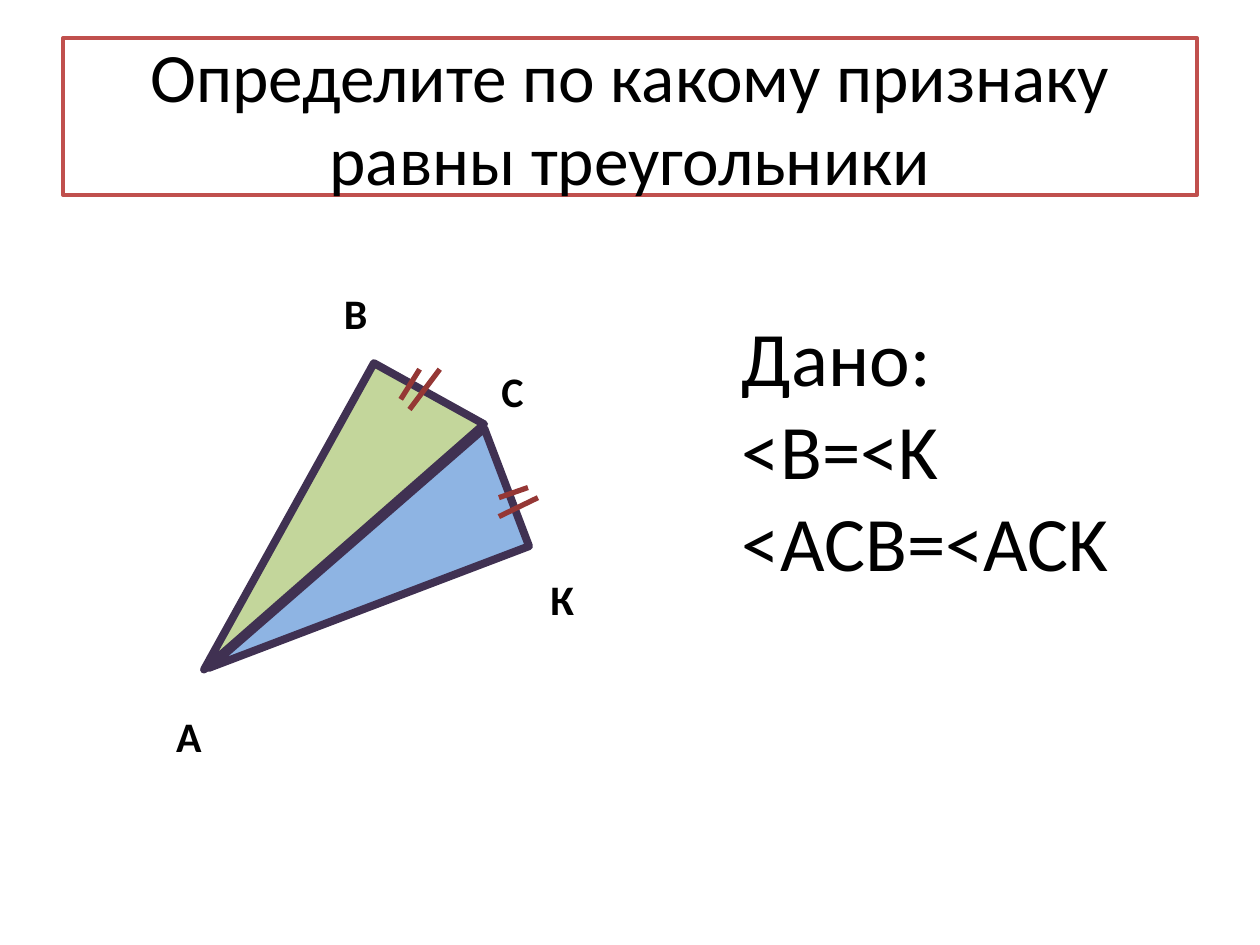
from typing import NamedTuple

from lxml import etree
from pptx import Presentation
from pptx.dml.color import RGBColor
from pptx.enum.shapes import MSO_CONNECTOR, MSO_SHAPE
from pptx.enum.text import MSO_ANCHOR, MSO_AUTO_SIZE, PP_ALIGN
from pptx.oxml.ns import qn
from pptx.util import Pt

RIGHT_TRIANGLE = MSO_SHAPE.RIGHT_TRIANGLE
STRAIGHT = MSO_CONNECTOR.STRAIGHT
MIDDLE = MSO_ANCHOR.MIDDLE
CENTER = PP_ALIGN.CENTER
FIT_SHAPE, FIT_NONE = MSO_AUTO_SIZE.SHAPE_TO_FIT_TEXT, MSO_AUTO_SIZE.NONE

FONT = "Calibri"
BLACK = RGBColor(0x00, 0x00, 0x00)
WHITE = RGBColor(0xFF, 0xFF, 0xFF)
RED = RGBColor(0xC0, 0x50, 0x4D)
DARK_RED = RGBColor(0x95, 0x37, 0x35)
PURPLE = RGBColor(0x40, 0x31, 0x52)
GREEN = RGBColor(0xC3, 0xD6, 0x9B)
BLUE = RGBColor(0x8E, 0xB4, 0xE3)


class Triangle(NamedTuple):
    left: float
    top: float
    width: float
    height: float
    rotation: float
    flipped: bool
    fill: RGBColor


class Vertex(NamedTuple):
    name: str
    left: float
    top: float


class Tick(NamedTuple):
    x1: float
    y1: float
    x2: float
    y2: float


TRIANGLES = [
    Triangle(96.5, 276.5, 200.2, 72, 119, False, GREEN),
    Triangle(100.1, 277.2, 195.8, 72, 159.2, True, BLUE),
]
VERTICES = [
    Vertex("А", 93.6, 402.5),
    Vertex("В", 189.4, 160.6),
    Vertex("С", 279.4, 205.2),
    Vertex("К", 307.4, 324),
]
TICKS = [
    Tick(251.3, 211, 234, 234),
    Tick(239.8, 211, 229, 228.2),
    Tick(301.7, 278.6, 285.1, 284.4),
    Tick(307.4, 284.4, 285.1, 295.2),
]
GIVEN = ["Дано:", "<B=<K", "<ACB=<ACK"]


def add_run(p, text: str, size: float, bold: bool = False) -> None:
    r = p.add_run()
    r.text = text
    r.font.name = FONT
    r.font.size = Pt(size)
    r.font.bold = bold
    r.font.color.rgb = BLACK


def set_title(sp, text: str) -> None:
    sp.left, sp.top, sp.width, sp.height = Pt(36), Pt(21.6), Pt(648), Pt(90)
    sp.fill.solid()
    sp.fill.fore_color.rgb = WHITE
    sp.line.color.rgb = RED
    sp.line.width = Pt(2)
    tf = sp.text_frame
    tf.auto_size = FIT_NONE
    tf.vertical_anchor = MIDDLE
    p = tf.paragraphs[0]
    p.alignment = CENTER
    add_run(p, text, 39.6)


def add_triangle(s, t: Triangle) -> None:
    sp = s.shapes.add_shape(RIGHT_TRIANGLE, Pt(t.left), Pt(t.top), Pt(t.width), Pt(t.height))
    sp.shadow.inherit = False
    sp.rotation = t.rotation
    if t.flipped:
        sp.element.spPr.find(qn("a:xfrm")).set("flipV", "1")
    sp.fill.solid()
    sp.fill.fore_color.rgb = t.fill
    sp.line.color.rgb = PURPLE
    sp.line.width = Pt(4.5)


def add_text(s, left: float, top: float, width: float, height: float,
             lines: list[str], size: float, bold: bool, wrap: bool) -> None:
    tf = s.shapes.add_textbox(Pt(left), Pt(top), Pt(width), Pt(height)).text_frame
    tf.word_wrap = wrap
    tf.auto_size = FIT_SHAPE
    for i, line in enumerate(lines):
        p = tf.add_paragraph() if i else tf.paragraphs[0]
        add_run(p, line, size, bold)


def add_tick(s, t: Tick) -> None:
    """Mark one of two equal sides with a short stroke."""
    c = s.shapes.add_connector(STRAIGHT, Pt(t.x1), Pt(t.y1), Pt(t.x2), Pt(t.y2))
    c.line.color.rgb = DARK_RED
    c.line.width = Pt(3)
    etree.SubElement(c.element.spPr, qn("a:effectLst"))


def main() -> None:
    prs = Presentation()
    prs.slide_width, prs.slide_height = Pt(720), Pt(540)
    s = prs.slides.add_slide(prs.slide_layouts[5])
    set_title(s.shapes.title, "Определите по какому признаку равны треугольники")
    for triangle in TRIANGLES:
        add_triangle(s, triangle)
    for v in VERTICES:
        add_text(s, v.left, v.top, 28, 36.7, [v.name], 24, bold=True, wrap=False)
    for tick in TICKS:
        add_tick(s, tick)
    add_text(s, 416.9, 173.5, 266.4, 167, GIVEN, 44, bold=False, wrap=True)
    prs.save("out.pptx")


if __name__ == "__main__":
    main()
